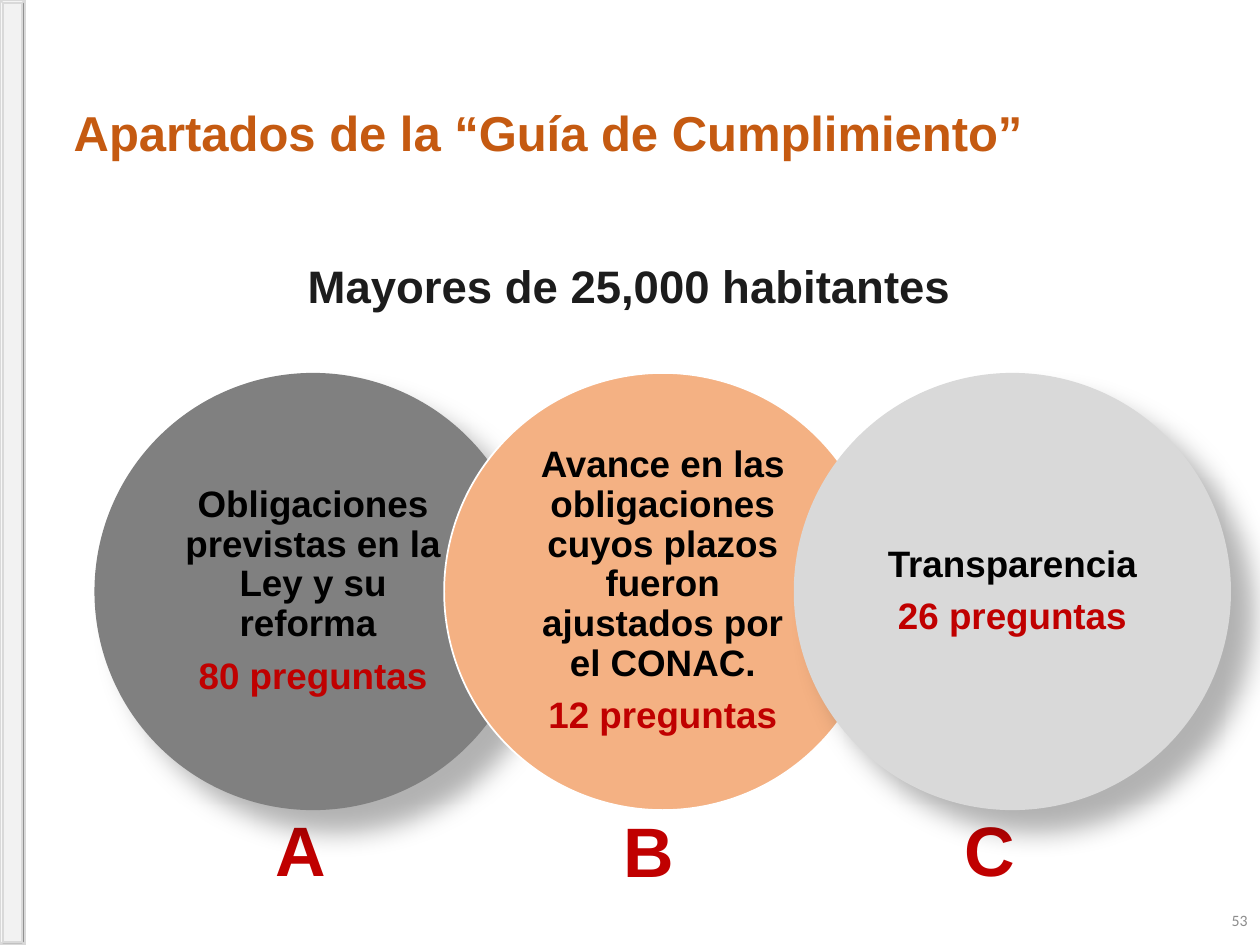
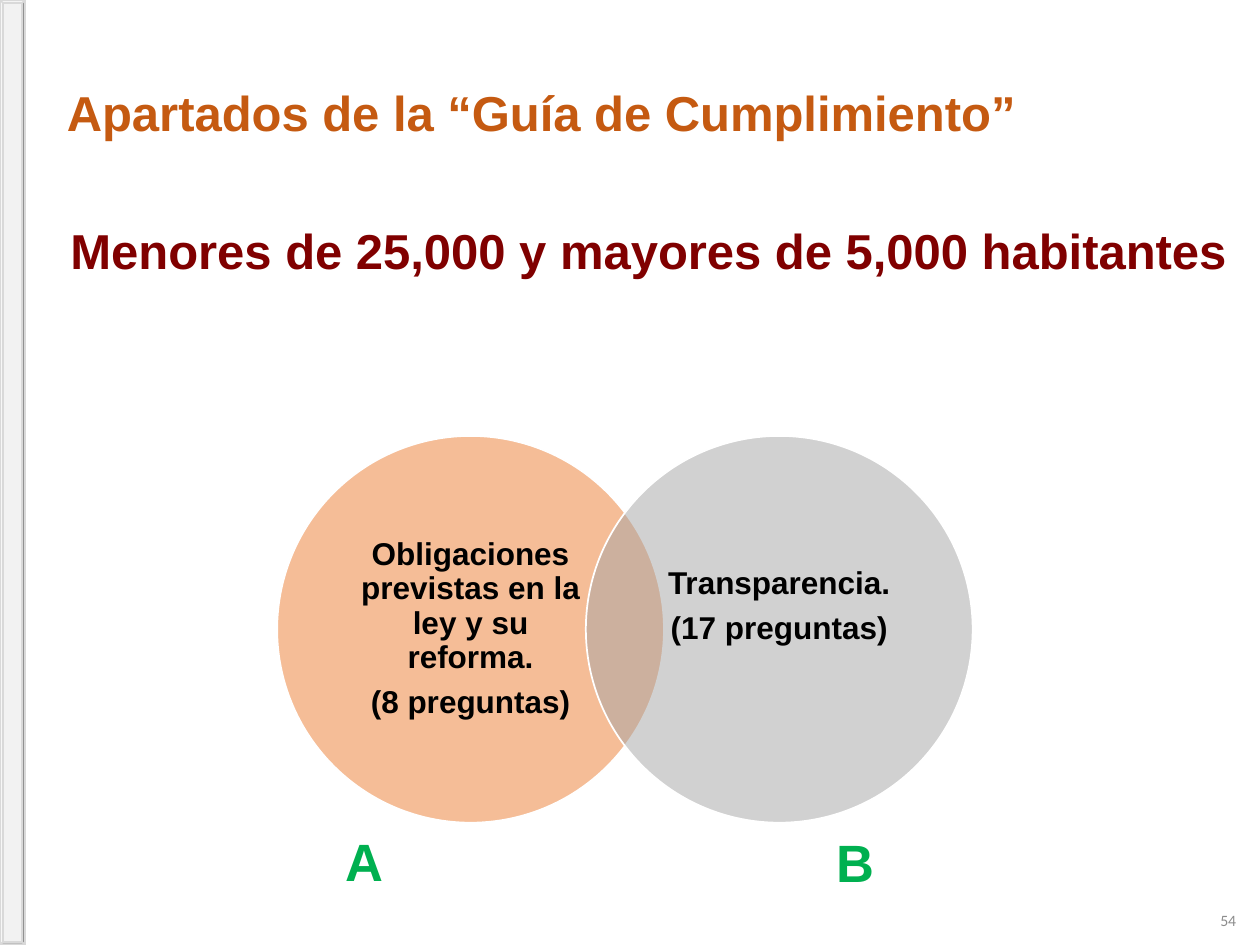
from lxml import etree
from pptx import Presentation
from pptx.dml.color import RGBColor
from pptx.enum.shapes import MSO_SHAPE as SHAPE
from pptx.enum.text import MSO_ANCHOR as ANCHOR, PP_ALIGN as ALIGN
from pptx.oxml import parse_xml
from pptx.oxml.ns import nsdecls, qn
from pptx.util import Inches, Pt

# Shared colours and fonts
BLACK = RGBColor(0x00, 0x00, 0x00)
WHITE = RGBColor(0xFF, 0xFF, 0xFF)
INK = RGBColor(0x1C, 0x1C, 0x1C)
RUST = RGBColor(0xC5, 0x5A, 0x11)
RED = RGBColor(0xC0, 0x00, 0x00)
MAROON = RGBColor(0x80, 0x00, 0x00)
GREEN = RGBColor(0x00, 0xB0, 0x50)
ORANGE = RGBColor(0xED, 0x7D, 0x31)
PEACH = RGBColor(0xF4, 0xB1, 0x83)
DARK_GREY = RGBColor(0x80, 0x80, 0x80)
MID_GREY = RGBColor(0xA5, 0xA5, 0xA5)
LIGHT_GREY = RGBColor(0xD9, 0xD9, 0xD9)
BAND_GREY = RGBColor(0xF2, 0xF2, 0xF2)
NUMBER_GREY = RGBColor(0x8C, 0x8C, 0x8C)
FONT, NUMBER_FONT = "Arial", "Calibri"
TITLE = "Apartados de la “Guía de Cumplimiento”"


def add_run(p, text, size, color, bold=True, font=FONT):
    r = p.add_run()
    r.text = text
    r.font.name, r.font.size, r.font.bold = font, Pt(size), bold
    r.font.color.rgb = color


def add_text(s, box, text, size, color, align=ALIGN.LEFT, anchor=ANCHOR.TOP,
             spacing=1.0, bold=True, font=FONT):
    tf = s.shapes.add_textbox(*(Inches(v) for v in box)).text_frame
    tf.word_wrap = True
    tf.vertical_anchor = anchor
    p = tf.paragraphs[0]
    p.alignment, p.line_spacing = align, spacing
    add_run(p, text, size, color, bold, font)


def add_shape(s, kind, box, fill, line=None):
    sp = s.shapes.add_shape(kind, *(Inches(v) for v in box))
    sp.shadow.inherit = False
    sp.fill.solid()
    sp.fill.fore_color.rgb = fill
    if line is None:
        sp.line.fill.background()
    else:
        sp.line.color.rgb = line
        sp.line.width = Pt(1)
    return sp


def set_opacity(sp, percent):
    color = sp._element.spPr.find(qn("a:solidFill")).find(qn("a:srgbClr"))
    etree.SubElement(color, qn("a:alpha")).set("val", str(percent * 1000))


def add_shadow(sp):
    """Soft shadow falling to the lower right."""
    effects = sp._element.spPr.find(qn("a:effectLst"))
    effects.append(parse_xml(
        f'<a:outerShdw {nsdecls("a")} blurRad="{Pt(15)}" dist="{Pt(18)}" '
        f'dir="{45 * 60000}" algn="tl" rotWithShape="0">'
        '<a:srgbClr val="000000"><a:alpha val="30000"/></a:srgbClr>'
        '</a:outerShdw>'))


def add_circle(s, left, top, size, fill, line, lines, text_size, inset, lift=0):
    """Circle with centred paragraphs; lift is extra room below the text."""
    sp = add_shape(s, SHAPE.OVAL, (left, top, size, size), fill, line)
    tf = sp.text_frame
    tf.word_wrap = True
    tf.vertical_anchor = ANCHOR.MIDDLE
    tf.margin_left = tf.margin_right = Inches(inset)
    tf.margin_top, tf.margin_bottom = Inches(0.03), Inches(0.03 + lift)
    for i, (text, color) in enumerate(lines):
        p = tf.add_paragraph() if i else tf.paragraphs[0]
        p.alignment, p.line_spacing = ALIGN.CENTER, 0.9
        p.space_after = Pt(0.35 * text_size)
        add_run(p, text, text_size, color)
    return sp


def add_base(prs, title_box, number, number_box):
    """Blank slide with side band, title and slide number."""
    s = prs.slides.add_slide(prs.slide_layouts[6])
    add_shape(s, SHAPE.BEVEL, (0, 0, 0.2, 7.5), BAND_GREY, LIGHT_GREY)
    add_text(s, title_box, TITLE, 28, RUST, ALIGN.CENTER, spacing=0.9)
    add_text(s, number_box, number, 9, NUMBER_GREY, ALIGN.RIGHT, ANCHOR.MIDDLE,
             bold=False, font=NUMBER_FONT)
    return s


def build_large_towns(prs):
    s = add_base(prs, (0.24, 0.82, 8.22, 1.18), "53", (9.47, 7.1, 0.53, 0.4))
    for letter, left, top in (("A", 2.09, 6.35), ("B", 4.85, 6.36), ("C", 7.56, 6.35)):
        add_text(s, (left, top, 1.02, 0.77), letter, 40, RED)

    sections = (
        ("Obligaciones previstas en la Ley y su reforma ", "80 preguntas",
         DARK_GREY, None),
        ("Avance en las obligaciones cuyos plazos fueron ajustados por el CONAC.",
         "12 preguntas", PEACH, WHITE),
        ("Transparencia", "26 preguntas", LIGHT_GREY, None),
    )
    for i, (name, count, fill, line) in enumerate(sections):
        sp = add_circle(s, 0.75 + i * 2.775, 2.96, 3.47, fill, line,
                        ((name, BLACK), (count, RED)), 21, 0.19)
        if line is None:
            add_shadow(sp)
    add_text(s, (1.69, 2, 6.61, 0.54), "Mayores de 25,000 habitantes", 26, INK,
             ALIGN.CENTER)


def build_medium_towns(prs):
    s = add_base(prs, (0.32, 0.66, 7.95, 0.59), "54", (9.45, 7.1, 0.46, 0.4))
    sections = (
        ("Obligaciones previstas en la ley y su reforma.", "(8 preguntas)", ORANGE, 0),
        ("Transparencia.", "(17 preguntas)", MID_GREY, 0.35),
    )
    for i, (name, count, fill, lift) in enumerate(sections):
        sp = add_circle(s, 2.2 + i * 2.45, 3.46, 3.07, fill, WHITE,
                        ((name, BLACK), (count, BLACK)), 18, 0.17, lift)
        set_opacity(sp, 50)
    for letter, left, top in (("A", 2.64, 6.53), ("B", 6.54, 6.54)):
        add_text(s, (left, top, 1.45, 0.61), letter, 30, GREEN)
    add_text(s, (0.2, 1.7, 10, 0.57),
             "Menores de 25,000 y mayores de 5,000 habitantes ", 28, MAROON,
             ALIGN.CENTER)


def main():
    prs = Presentation()
    prs.slide_width, prs.slide_height = Inches(10), Inches(7.5)
    build_large_towns(prs)
    build_medium_towns(prs)
    prs.save("out.pptx")


if __name__ == "__main__":
    main()
